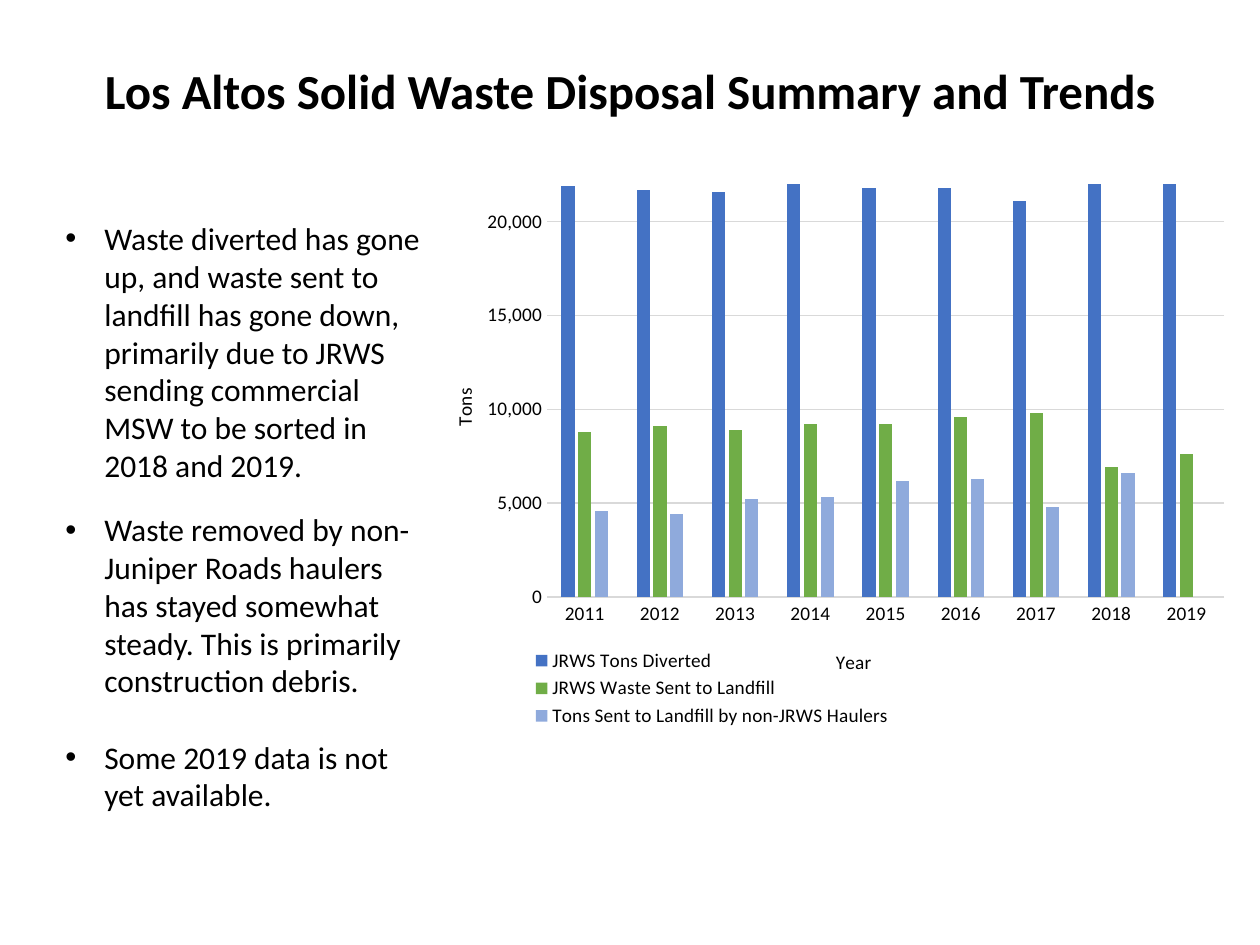
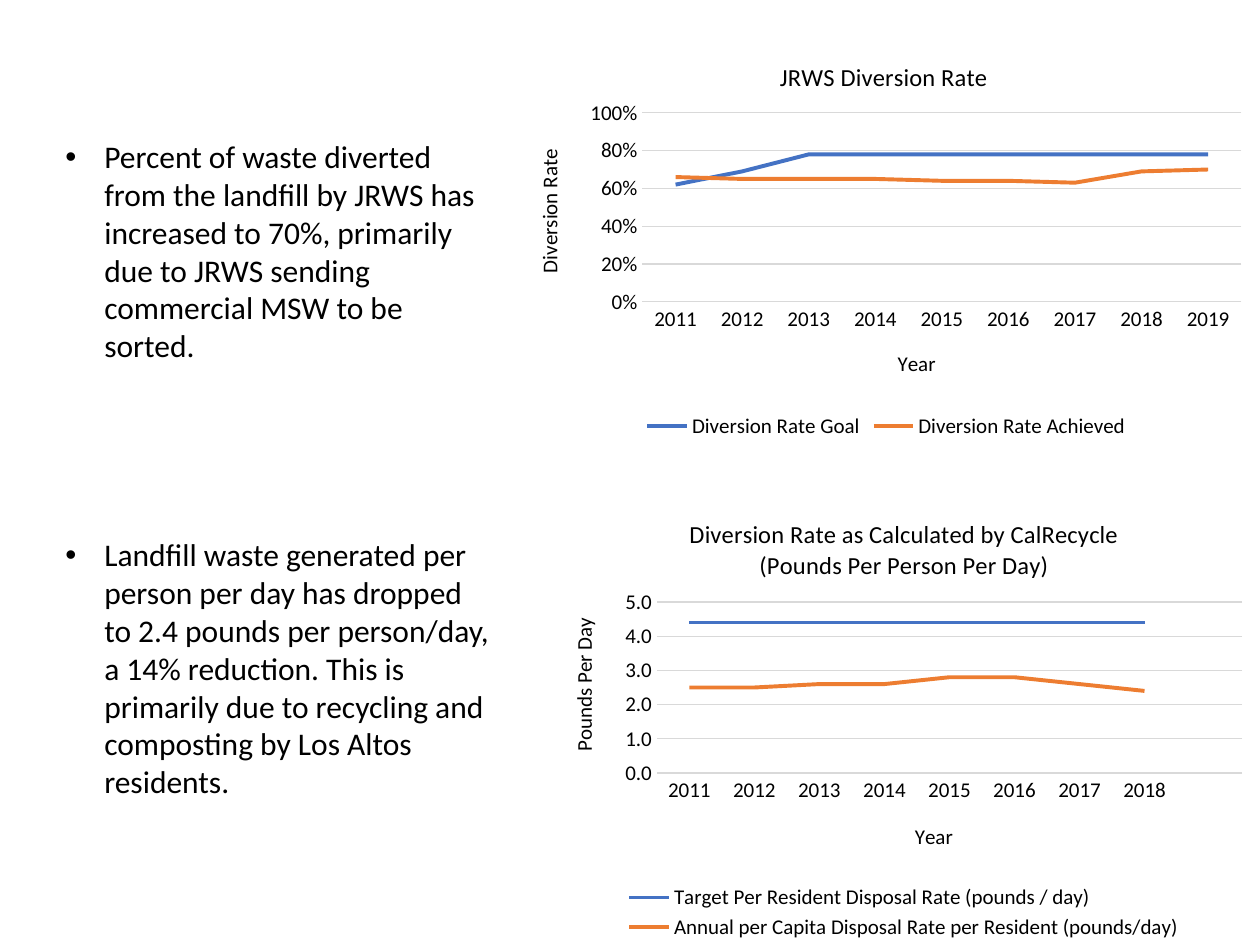
from lxml.etree import SubElement
from pptx import Presentation
from pptx.chart.data import CategoryChartData
from pptx.dml.color import RGBColor
from pptx.enum.chart import XL_CHART_TYPE, XL_LEGEND_POSITION, XL_TICK_MARK
from pptx.enum.text import PP_ALIGN
from pptx.oxml import parse_xml
from pptx.oxml.ns import nsdecls, qn
from pptx.util import Pt

PX = 9144  # 100 px to the inch
FONT = "Calibri"
BLACK, GRID = "000000", "D9D9D9"
BLUE, GREEN, PALE_BLUE, ORANGE = "4472C4", "70AD47", "8FAADC", "ED7D31"
YEARS = [str(year) for year in range(2011, 2020)]


def rgb(hex_text):
    return RGBColor.from_string(hex_text)


def set_layout(element, x, y, width=None, height=None):
    """Fix a chart part's place, in fractions of the chart's size."""
    for old_layout in element.findall(qn("c:layout")):
        element.remove(old_layout)
    layout = parse_xml(f"<c:layout {nsdecls('c')}><c:manualLayout/></c:layout>")
    settings = [("xMode", "edge"), ("yMode", "edge"), ("x", x), ("y", y)]
    if width:
        settings += [("w", width), ("h", height)]
    if element.tag == qn("c:plotArea"):
        settings.insert(0, ("layoutTarget", "inner"))
    for name, value in settings:
        SubElement(layout[0], qn(f"c:{name}")).set("val", str(value))
    overlay = element.find(qn("c:overlay"))
    if overlay is None:
        element.insert(0, layout)
    else:
        overlay.addprevious(layout)


presentation = Presentation()
presentation.slide_width, presentation.slide_height = 1000 * PX, 750 * PX
summary_slide, rates_slide = [
    presentation.slides.add_slide(presentation.slide_layouts[6]) for _ in range(2)
]

# Slide heading
heading = summary_slide.shapes.add_textbox(66 * PX, 43 * PX, 868 * PX, 57 * PX)
heading.text_frame.word_wrap = True
paragraph = heading.text_frame.paragraphs[0]
paragraph.alignment = PP_ALIGN.CENTER
run = paragraph.add_run()
run.text = "Los Altos Solid Waste Disposal Summary and Trends"
run.font.name, run.font.size, run.font.bold = FONT, Pt(28), True
run.font.color.rgb = rgb(BLACK)

# Bulleted findings: slide, top, width, height, paragraphs
findings = [
    (summary_slide, 169, 307, 222, [
        "Waste diverted has gone up, and waste sent to landfill has gone down, primarily "
        "due to JRWS sending commercial MSW to be sorted in 2018 and 2019."]),
    (summary_slide, 400, 307, 252, [
        "Waste removed by non-Juniper Roads haulers has stayed somewhat steady. "
        "This is primarily construction debris.",
        "Some 2019 data is not yet available."]),
    (rates_slide, 104, 360, 192, [
        "Percent of waste diverted from the landfill by JRWS has increased to 70%, "
        "primarily due to JRWS sending commercial MSW to be sorted."]),
    (rates_slide, 420, 360, 222, [
        "Landfill waste generated per person per day has dropped to 2.4 pounds per "
        "person/day, a 14% reduction. This is primarily due to recycling and composting "
        "by Los Altos residents."]),
]
for slide, top, width, height, texts in findings:
    frame = slide.shapes.add_textbox(42 * PX, top * PX, width * PX, height * PX).text_frame
    frame.word_wrap = True
    for index, text in enumerate(texts):
        paragraph = frame.add_paragraph() if index else frame.paragraphs[0]
        properties = paragraph._p.get_or_add_pPr()
        properties.set("marL", str(31 * PX))
        properties.set("indent", str(-31 * PX))
        SubElement(properties, qn("a:buFont")).set("typeface", "Arial")
        SubElement(properties, qn("a:buChar")).set("char", "•")
        if index:
            paragraph.space_before = Pt(22)
        run = paragraph.add_run()
        run.text = text
        run.font.name, run.font.size = FONT, Pt(18)
        run.font.color.rgb = rgb(BLACK)

# Charts; places inside a chart are fractions of its size
charts = [
    dict(slide=summary_slide, box=(349, 131, 636, 459), kind=XL_CHART_TYPE.COLUMN_CLUSTERED,
         size=11, title=[], title_at=None, years=YEARS,
         value_title="Tons", value_at=(0.01, 0.38), year_at=(0.49, 0.83),
         plot=(0.134, 0.033, 0.845, 0.714), legend=(0.1, 0.83, 0.48, 0.15),
         top=22000, step=5000, number_format="#,##0",
         series=[
             ("JRWS Tons Diverted", BLUE,
              [21900, 21700, 21600, 22200, 21800, 21800, 21100, 23000, 25000]),
             ("JRWS Waste Sent to Landfill", GREEN,
              [8800, 9100, 8900, 9200, 9200, 9600, 9800, 6900, 7600]),
             ("Tons Sent to Landfill by non-JRWS Haulers", PALE_BLUE,
              [4600, 4400, 5200, 5300, 6200, 6300, 4800, 6600, None])]),
    dict(slide=rates_slide, box=(410, 28, 587, 324), kind=XL_CHART_TYPE.LINE,
         size=12, title=["JRWS Diversion Rate"], title_at=(0.35, 0.05), years=YEARS,
         value_title="Diversion Rate", value_at=(0.02, 0.27), year_at=(0.51, 0.76),
         plot=(0.17, 0.19, 0.81, 0.463), legend=None,
         top=1, step=0.2, number_format="0%",
         series=[
             ("Diversion Rate Goal", BLUE, [0.62, 0.69] + [0.78] * 7),
             ("Diversion Rate Achieved", ORANGE,
              [0.66, 0.65, 0.65, 0.65, 0.64, 0.64, 0.63, 0.69, 0.7])]),
    dict(slide=rates_slide, box=(438, 390, 559, 360), kind=XL_CHART_TYPE.LINE,
         size=12, title=["Diversion Rate as Calculated by CalRecycle",
                         "(Pounds Per Person Per Day)"],
         title_at=(0.19, 0.05), years=YEARS[:-1] + [""],
         value_title="Pounds Per Day", value_at=(0.02, 0.27), year_at=(0.51, 0.72),
         plot=(0.149, 0.244, 0.831, 0.377), legend=None,
         top=5, step=1, number_format="#,##0.0",
         series=[
             ("Target Per Resident Disposal Rate (pounds / day)", BLUE, [4.4] * 8 + [None]),
             ("Annual per Capita Disposal Rate per Resident (pounds/day)", ORANGE,
              [2.5, 2.5, 2.6, 2.6, 2.8, 2.8, 2.6, 2.4, None])]),
]
for item in charts:
    chart_data = CategoryChartData()
    chart_data.categories = item["years"]
    for name, _, values in item["series"]:
        chart_data.add_series(name, values)
    left, top, width, height = [length * PX for length in item["box"]]
    chart = item["slide"].shapes.add_chart(
        item["kind"], left, top, width, height, chart_data).chart
    chart.font.name, chart.font.size = FONT, Pt(item["size"])
    chart.font.color.rgb = rgb(BLACK)

    plot = chart.plots[0]
    plot.vary_by_categories = False
    is_column = item["kind"] == XL_CHART_TYPE.COLUMN_CLUSTERED
    if is_column:
        plot.gap_width, plot.overlap = 219, -27
    for series, (_, color, _) in zip(plot.series, item["series"]):
        if is_column:
            series.format.fill.solid()
            series.format.fill.fore_color.rgb = rgb(color)
        else:
            series.smooth = False
            series.format.line.width = Pt(2.25)
            series.format.line.color.rgb = rgb(color)

    year_axis, value_axis = chart.category_axis, chart.value_axis
    for axis in (year_axis, value_axis):
        axis.major_tick_mark = axis.minor_tick_mark = XL_TICK_MARK.NONE
    value_axis.minimum_scale, value_axis.maximum_scale = 0, item["top"]
    value_axis.major_unit = item["step"]
    value_axis.tick_labels.number_format = item["number_format"]
    value_axis.tick_labels.number_format_is_linked = False
    value_axis.has_major_gridlines = True
    value_axis.format.line.fill.background()
    for line in (year_axis.format.line, value_axis.major_gridlines.format.line):
        line.width = Pt(0.75)
        line.color.rgb = rgb(GRID)

    chart.has_title = bool(item["title"])
    titles = [(year_axis.axis_title, ["Year"], item["size"], item["year_at"]),
              (value_axis.axis_title, [item["value_title"]], item["size"], item["value_at"])]
    if item["title"]:
        titles.append((chart.chart_title, item["title"], 14, item["title_at"]))
    for title, lines, size, place in titles:
        frame = title.text_frame
        for index, text in enumerate(lines):
            paragraph = frame.add_paragraph() if index else frame.paragraphs[0]
            run = paragraph.add_run()
            run.text = text
            run.font.name, run.font.size, run.font.bold = FONT, Pt(size), False
            run.font.color.rgb = rgb(BLACK)
        set_layout(title._element, *place)
    body = value_axis.axis_title.text_frame._txBody.bodyPr
    body.set("rot", "-5400000")
    body.set("vert", "horz")

    chart.has_legend = True
    chart.legend.position = XL_LEGEND_POSITION.BOTTOM
    chart.legend.include_in_layout = False
    chart.legend.font.name, chart.legend.font.size = FONT, Pt(item["size"])
    chart.legend.font.color.rgb = rgb(BLACK)
    if item["legend"]:
        set_layout(chart.legend._element, *item["legend"])
    set_layout(chart._chartSpace.chart.plotArea, *item["plot"])

presentation.save("out.pptx")
